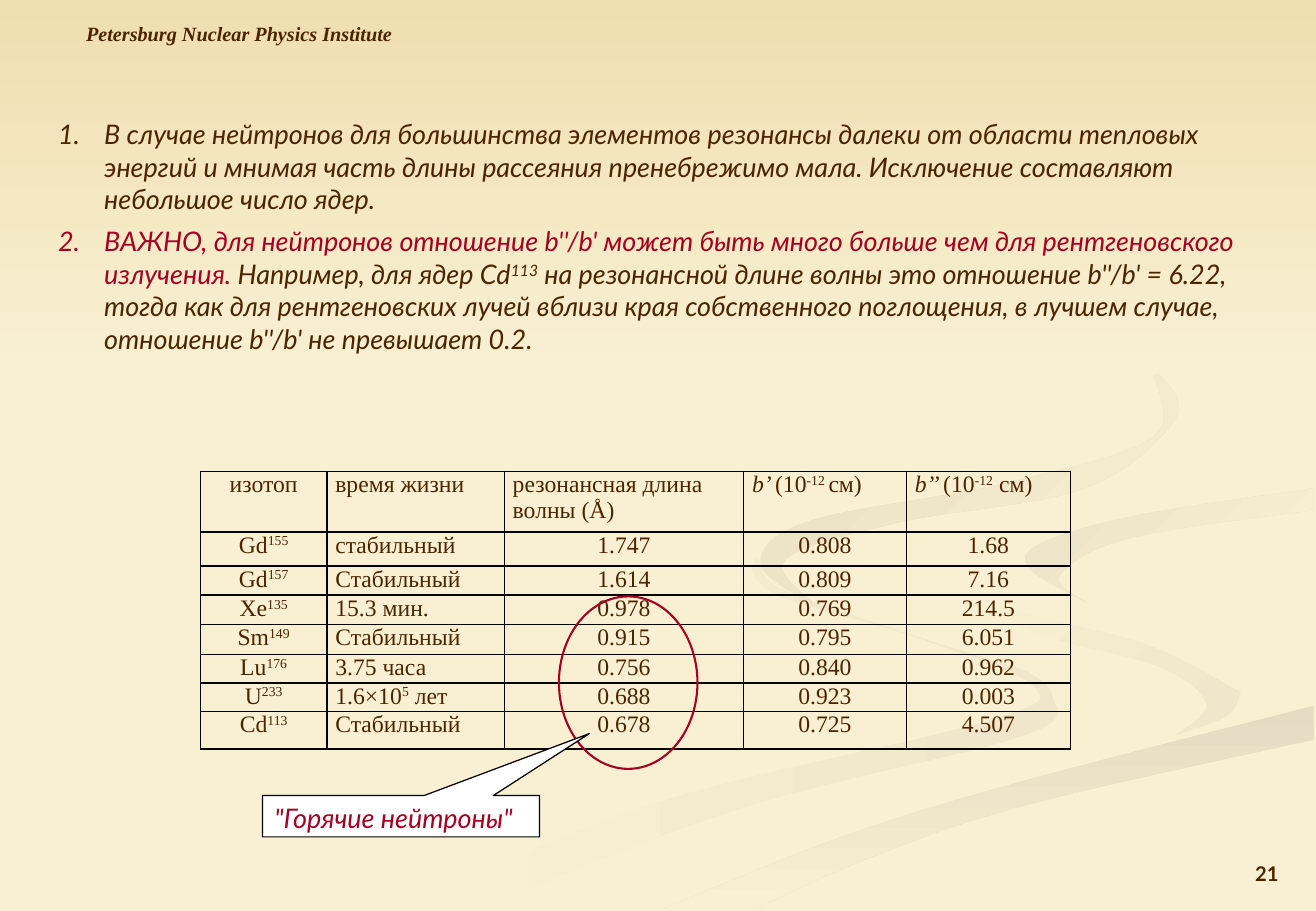
import pptx
import pptx.util
import pptx.dml.color
import pptx.enum.shapes
import pptx.enum.text
import pptx.oxml.ns
from lxml import etree

PX = 9144  # 100 px to the inch
ALIGN = pptx.enum.text.PP_ALIGN
ANCHOR = pptx.enum.text.MSO_ANCHOR
SHAPES = pptx.enum.shapes.MSO_SHAPE

COLORS = {
    "paper": "F9F0D3", "sand": "EFDEAF", "brown": "4B2500", "red": "A50021",
    "white": "FFFFFF", "black": "000000", "ribbon_pale": "EFE6CB",
    "ribbon_deep": "E4DCC2", "ribbon_mid": "EBE3C7", "ribbon_tall": "E8DFC4",
}

SERIF = {"name": "Times New Roman", "size": pptx.util.Pt(14)}
HEADING = {"name": "Times New Roman", "size": pptx.util.Pt(12), "bold": True, "italic": True}
BODY = {"name": "Lato", "size": pptx.util.Pt(16), "italic": True}
NUMBER = {"name": "Lato", "size": pptx.util.Pt(12), "bold": True}

# Ribbons: first colour, last colour, clockwise angle, curved edges
RIBBONS = [
    ("paper", "ribbon_pale", 0, [
        [(846, 553), (739, 519), (643, 485), (623, 459)],
        [(618, 468), (642, 491), (755, 525), (851, 565), (812, 594), (540, 661), (325, 749)],
        [(391, 749), (611, 665), (844, 605), (866, 573), (846, 553)]]),
    ("paper", "ribbon_pale", 45, [
        [(1021, 570), (942, 530), (821, 498), (784, 464)],
        [(784, 468), (845, 518), (954, 549), (993, 580), (968, 605)],
        [(968, 605), (1010, 589), (1021, 570)]]),
    ("ribbon_deep", "paper", 90, [
        [(545, 749), (682, 693), (828, 647), (1081, 581)],
        [(1081, 609), (851, 661), (726, 702), (619, 749)]]),
    ("ribbon_mid", "paper", 45, [
        [(1081, 402), (937, 424), (857, 447), (847, 468), (894, 496)],
        [(894, 496), (872, 474), (930, 443), (1081, 420)]]),
    ("ribbon_tall", "paper", 45, [
        [(953, 307), (968, 344), (893, 402), (740, 430), (646, 461), (673, 500)],
        [(673, 500), (626, 465), (666, 429), (827, 398), (949, 360), (949, 306)]]),
]

# In marked text ^ encloses superscript and * encloses italic
LIST_ITEMS = [
    [("В случае нейтронов для большинства элементов резонансы далеки от области тепловых "
      "энергий и мнимая часть длины рассеяния пренебрежимо мала. Исключение составляют "
      "небольшое число ядер.", "brown")],
    [("ВАЖНО, для нейтронов отношение b''/b' может быть много больше чем для "
      "рентгеновского излучения. ", "red"),
     ("Например, для ядер Cd^113^ на резонансной длине волны это отношение b''/b' = 6.22, "
      "тогда как для рентгеновских лучей вблизи края собственного поглощения, в лучшем "
      "случае, отношение b''/b' не превышает 0.2.", "brown")],
]
ISOTOPES = [
    ["изотоп", "время жизни", "резонансная длина волны (Å)",
     "*b’ *(10^-12 ^см)", "*b’’ *(10^-12^ см)"],
    ["Gd^155^", "стабильный", "1.747", "0.808", "1.68"],
    ["Gd^157^", "Стабильный", "1.614", "0.809", "7.16"],
    ["Xe^135^", "15.3 мин.", "0.978", "0.769", "214.5"],
    ["Sm^149^", "Стабильный", "0.915", "0.795", "6.051"],
    ["Lu^176^", "3.75 часа", "0.756", "0.840", "0.962"],
    ["U^233^", "1.6×10^5^ лет", "0.688", "0.923", "0.003"],
    ["Cd^113^", "Стабильный", "0.678", "0.725", "4.507"],
]
COLUMN_WIDTHS = [104, 146, 197, 134, 135]
ROW_HEIGHTS = [50, 28, 24, 24, 25, 23, 23, 31]


def emu(box):
    return [length * PX for length in box]


def color(name):
    return pptx.dml.color.RGBColor.from_string(COLORS[name])


def apply(target, values):
    for name, value in values.items():
        setattr(target, name, value)


def write(para, marked, font, ink):
    for i, part in enumerate(marked.split("^")):
        for j, text in enumerate(part.split("*")):
            if not text:
                continue
            span = para.add_run()
            span.text = text
            apply(span.font, font)
            span.font.color.rgb = color(ink)
            if j % 2:
                span.font.italic = True
            if i % 2:
                span.font._element.set("baseline", "30000")


def add_text(page, box, marked, font, align=ALIGN.LEFT, anchor=ANCHOR.TOP):
    frame = page.shapes.add_textbox(*emu(box)).text_frame
    apply(frame, {"word_wrap": True, "vertical_anchor": anchor})
    frame.paragraphs[0].alignment = align
    write(frame.paragraphs[0], marked, font, "brown")


def curve(knots, steps=8):
    """Points of a Catmull-Rom curve through the knots."""
    ends = [knots[0], *knots, knots[-1]]
    points = [knots[0]]
    for a, b, c, d in zip(ends, ends[1:], ends[2:], ends[3:]):
        for step in range(1, steps + 1):
            t = step / steps
            points.append(tuple(
                b[k] + t * (c[k] - a[k]) / 2
                + t * t * (2 * a[k] - 5 * b[k] + 4 * c[k] - d[k]) / 2
                + t ** 3 * (3 * b[k] - a[k] - 3 * c[k] + d[k]) / 2 for k in (0, 1)))
    return points


def add_ribbon(page, first, last, angle, edges):
    points = [point for edge in edges for point in curve(edge)]
    builder = page.shapes.build_freeform(*emu(points[0]))
    builder.add_line_segments([emu(point) for point in points[1:]], close=True)
    paint_gradient(builder.convert_to_shape(), first, last, angle)


def paint_gradient(shape, first, last, angle):
    shape.shadow.inherit = False
    shape.line.fill.background()
    shape.fill.gradient()
    shape.fill.gradient_angle = -angle % 360
    for stop, name in zip(shape.fill.gradient_stops, (first, last)):
        stop.color.rgb = color(name)


def add_backdrop(page, band):
    page.background.fill.solid()
    page.background.fill.fore_color.rgb = color("paper")
    for ribbon in RIBBONS:
        add_ribbon(page, *ribbon)
    sky = page.shapes.add_shape(SHAPES.RECTANGLE, *emu(band))
    paint_gradient(sky, "sand", "paper", 90)


def add_numbered_list(page, box):
    frame = page.shapes.add_textbox(*emu(box)).text_frame
    frame.word_wrap = True
    for i, item in enumerate(LIST_ITEMS):
        para = frame.add_paragraph() if i else frame.paragraphs[0]
        props = para._p.get_or_add_pPr()
        props.set("marL", str(38 * PX))
        props.set("indent", str(-38 * PX))
        etree.SubElement(props, pptx.oxml.ns.qn("a:buAutoNum"), type="arabicPeriod")
        para.space_after = pptx.util.Pt(6)
        for marked, ink in item:
            write(para, marked, BODY, ink)


def add_borders(cell):
    props = cell._tc.get_or_add_tcPr()
    for side in ("lnL", "lnR", "lnT", "lnB"):
        line = etree.SubElement(props, pptx.oxml.ns.qn("a:" + side), w="12700")
        fill = etree.SubElement(line, pptx.oxml.ns.qn("a:solidFill"))
        etree.SubElement(fill, pptx.oxml.ns.qn("a:srgbClr"), val=COLORS["black"])


def add_isotope_table(page, left, top):
    box = (left, top, sum(COLUMN_WIDTHS), sum(ROW_HEIGHTS))
    table = page.shapes.add_table(len(ISOTOPES), len(COLUMN_WIDTHS), *emu(box)).table
    apply(table, {"first_row": False, "horz_banding": False})
    for column, width in zip(table.columns, COLUMN_WIDTHS):
        column.width = width * PX
    for row, height in zip(table.rows, ROW_HEIGHTS):
        row.height = height * PX
    for r, texts in enumerate(ISOTOPES):
        for c, marked in enumerate(texts):
            cell = table.cell(r, c)
            apply(cell, {"margin_left": 7 * PX, "margin_right": 7 * PX,
                         "margin_top": 0, "margin_bottom": 0})
            add_borders(cell)
            cell.fill.background()
            para = cell.text_frame.paragraphs[0]
            centred = c == 0 or (r > 0 and c > 1)
            para.alignment = ALIGN.CENTER if centred else ALIGN.LEFT
            write(para, marked, SERIF, "brown")


def add_outlined(page, kind, box, ink, width):
    shape = page.shapes.add_shape(kind, *emu(box))
    shape.shadow.inherit = False
    shape.fill.background()
    shape.line.color.rgb = color(ink)
    shape.line.width = pptx.util.Pt(width)
    return shape


def add_hot_neutrons(page, left, top):
    # Ring around the short wavelengths, then a callout pointing into it
    add_outlined(page, SHAPES.OVAL, (left + 244, top, 114, 142), "red", 1.25)
    callout = add_outlined(page, SHAPES.RECTANGULAR_CALLOUT,
                           (left, top + 164, 228, 34), "black", 0.75)
    callout.adjustments[0], callout.adjustments[1] = 0.68, -2
    callout.fill.solid()
    callout.fill.fore_color.rgb = color("white")
    frame = callout.text_frame
    apply(frame, {"word_wrap": True, "vertical_anchor": ANCHOR.TOP})
    frame.paragraphs[0].alignment = ALIGN.LEFT
    write(frame.paragraphs[0], '"Горячие нейтроны"', BODY, "red")


def main():
    deck = pptx.Presentation()
    apply(deck, {"slide_width": 1083 * PX, "slide_height": 750 * PX})
    page = deck.slides.add_slide(deck.slide_layouts[6])
    add_backdrop(page, (0, 0, 1083, 308))
    add_text(page, (61, 13, 290, 30), "Petersburg Nuclear Physics Institute", HEADING)
    add_text(page, (809, 682, 253, 52), "21", NUMBER, ALIGN.RIGHT, ANCHOR.BOTTOM)
    add_numbered_list(page, (38, 92, 1016, 207))
    add_isotope_table(page, 165, 388)
    add_hot_neutrons(page, 216, 491)
    deck.save("out.pptx")


if __name__ == "__main__":
    main()
